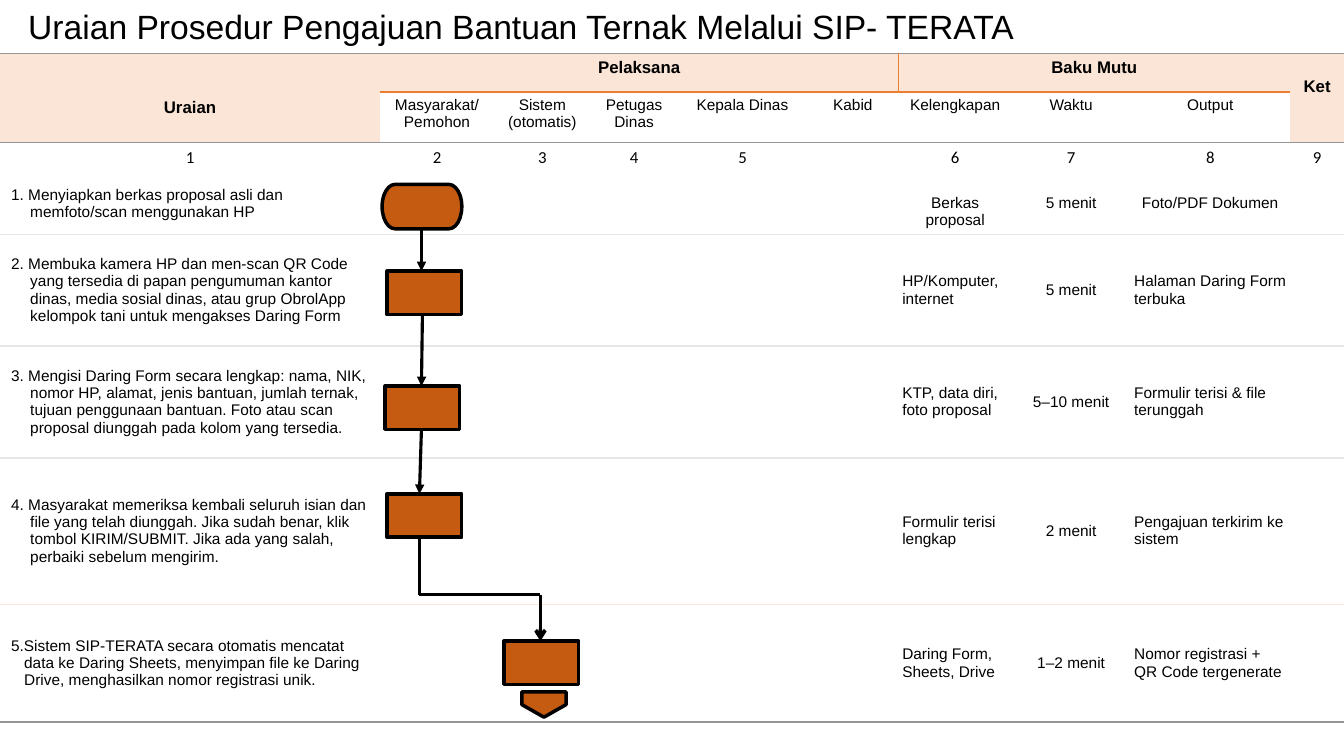
from itertools import accumulate
from lxml import etree
from pptx import Presentation, util as u
from pptx.dml.color import RGBColor
from pptx.enum import shapes, text
from pptx.oxml.ns import qn

TITLE = "Uraian Prosedur Pengajuan Bantuan Ternak Melalui SIP- TERATA"
GROUPS = [(0, 2, 1, "Uraian"), (1, 1, 5, "Pelaksana"), (6, 1, 3, "Baku Mutu"), (9, 2, 1, "Ket")]
HEADS = ["Masyarakat/Pemohon", "Sistem (otomatis)", "Petugas Dinas", "Kepala Dinas",
         "Kabid", "Kelengkapan", "Waktu", "Output"]
NUMBERS = ["1", "2", "3", "4", "5", "", "6", "7", "8", "9"]
STEPS = [
    ("1. Menyiapkan berkas proposal asli dan memfoto/scan menggunakan HP",
     "Berkas proposal", "5 menit", "Foto/PDF Dokumen"),
    ("2. Membuka kamera HP dan men-scan QR Code yang tersedia di papan pengumuman kantor dinas, "
     "media sosial dinas, atau grup ObrolApp kelompok tani untuk mengakses Daring Form",
     "HP/Komputer, internet", "5 menit", "Halaman Daring Form terbuka"),
    ("3. Mengisi Daring Form secara lengkap: nama, NIK, nomor HP, alamat, jenis bantuan, jumlah "
     "ternak, tujuan penggunaan bantuan. Foto atau scan proposal diunggah pada kolom yang tersedia.",
     "KTP, data diri, foto proposal", "5–10 menit", "Formulir terisi & file terunggah"),
    ("4. Masyarakat memeriksa kembali seluruh isian dan file yang telah diunggah. Jika sudah benar, "
     "klik tombol KIRIM/SUBMIT. Jika ada yang salah, perbaiki sebelum mengirim.",
     "Formulir terisi lengkap", "2 menit", "Pengajuan terkirim ke sistem"),
    ("5.Sistem SIP-TERATA secara otomatis mencatat data ke Daring Sheets, menyimpan file ke Daring "
     "Drive, menghasilkan nomor registrasi unik.",
     "Daring Form, Sheets, Drive", "1–2 menit", "Nomor registrasi + QR Code tergenerate"),
]
COLORS = {"ink": "000000", "head": "FBE5D6", "paper": "FFFFFF", "accent": "ED7D31",
          "box": "C55A11", "rule": "959595", "faint": "E7E6E6"}
COLS = [3.77, 1.13, 0.96, 0.86, 1.29, 0.9, 1.13, 1.17, 1.59, 0.53]
ROWS = [0.38, 0.5, 0.3, 0.61, 1.11, 1.11, 1.45, 1.17]
TOP = 0.53
X = list(accumulate(COLS, initial=0))
Y = list(accumulate(ROWS, initial=TOP))
BOX = (0.74, 0.43)
S = shapes.MSO_SHAPE
FLOW = [
    (S.FLOWCHART_TERMINATOR, 1, 3, 0.02, 0.12, (0.79, 0.44), 0),
    (S.RECTANGLE, 1, 4, 0.07, 0.37, BOX, 0),
    (S.RECTANGLE, 1, 5, 0.05, 0.4, BOX, 0),
    (S.RECTANGLE, 1, 6, 0.07, 0.36, BOX, 0),
    (S.RECTANGLE, 2, 7, 0.1, 0.37, BOX, 0),
    (S.PENTAGON, 2, 7, 0.37, 0.78, (0.25, 0.44), 90),
]
ARROW_X = [(4.18, 4.18), (4.19, 4.18), (4.18, 4.16)]
TURN_X, TURN_Y = (4.16, 5.36), 5.9
CENTER, LEFT = text.PP_ALIGN.CENTER, text.PP_ALIGN.LEFT
MIDDLE, UPPER = text.MSO_ANCHOR.MIDDLE, text.MSO_ANCHOR.TOP


def rgb(name):
    return RGBColor.from_string(COLORS[name])


def apply(obj, values):
    for key, value in values.items():
        setattr(obj, key, value)


def style(font, size, name="Arial", bold=False):
    apply(font, {"size": u.Pt(size), "name": name, "bold": bold})
    font.color.rgb = rgb("ink")


def write(cell, words, size=11, name="Arial", bold=False, align=CENTER, anchor=UPPER,
          side=0.11, edge=0.05, lead=0, hang=0):
    apply(cell, {"vertical_anchor": anchor, "margin_left": u.Inches(side),
                 "margin_right": u.Inches(side), "margin_top": u.Inches(edge + lead),
                 "margin_bottom": u.Inches(edge)})
    p = cell.text_frame.paragraphs[0]
    p.alignment = align
    if hang:
        apply_indent = {"marL": str(u.Inches(hang)), "indent": str(-u.Inches(hang))}
        for key, value in apply_indent.items():
            p._p.get_or_add_pPr().set(key, value)
    if words:
        r = p.add_run()
        r.text = words
        style(r.font, size, name, bold)
    else:
        etree.SubElement(p._p, qn("a:endParaRPr")).set("sz", str(size * 100))


def paint(cell, fill, borders):
    tcPr = cell._tc.get_or_add_tcPr()
    for side in "LRTB":
        ln = etree.SubElement(tcPr, qn("a:ln" + side))
        if side in borders:
            color, width = borders[side]
            ln.set("w", str(u.Pt(width)))
            solid = etree.SubElement(ln, qn("a:solidFill"))
            etree.SubElement(solid, qn("a:srgbClr")).set("val", COLORS[color])
        else:
            etree.SubElement(ln, qn("a:noFill"))
    cell.fill.solid()
    cell.fill.fore_color.rgb = rgb(fill)


def borders_of(row, col):
    rules = {0: ("rule", 1), 2: ("rule", 1), 4: ("faint", 1), 5: ("faint", 1),
             6: ("faint", 1), 7: ("head", 1), 8: ("rule", 1)}
    if 1 <= col <= 8:
        rules[1] = ("accent", 1.5)
    found = {side: rules[edge] for side, edge in (("T", row), ("B", row + 1)) if edge in rules}
    if row == 0 and col in (5, 6):
        found["R" if col == 5 else "L"] = ("accent", 1)
    return found


def add_table(s):
    frame = s.shapes.add_table(len(ROWS), len(COLS), 0, u.Inches(TOP),
                               u.Inches(sum(COLS)), u.Inches(sum(ROWS)))
    t = frame.table
    apply(t, {"first_row": False, "horz_banding": False})
    t._tbl.tblPr.find(qn("a:tableStyleId")).text = "{2D5ABB26-0587-4C30-8999-92F81FD0307C}"
    for col, width in zip(t.columns, COLS):
        col.width = u.Inches(width)
    for row, height in zip(t.rows, ROWS):
        row.height = u.Inches(height)
    for row in range(len(ROWS)):
        for col in range(len(COLS)):
            head = row == 0 or (row == 1 and col in (0, 9))
            paint(t.cell(row, col), "head" if head else "paper", borders_of(row, col))
    for col, down, across, words in GROUPS:
        t.cell(0, col).merge(t.cell(down - 1, col + across - 1))
        write(t.cell(0, col), words, 12, bold=True, lead=0.19 if down > 1 else 0,
              anchor=MIDDLE if col == 0 else UPPER)
    for col, words in enumerate(HEADS, 1):
        write(t.cell(1, col), words)
    for col, words in enumerate(NUMBERS):
        write(t.cell(2, col), words, 12, "Calibri", anchor=MIDDLE if col == 0 else UPPER)
    for row, (task, *quality) in enumerate(STEPS, 3):
        write(t.cell(row, 0), task, align=LEFT, anchor=MIDDLE, hang=0.13 if row == 7 else 0.19)
        for col in (1, 2, 3, 4, 5, 9):
            write(t.cell(row, col), "")
        for col, words in enumerate(quality, 6):
            if row == 3:
                write(t.cell(row, col), words, lead=0.17)
            else:
                write(t.cell(row, col), words, align=CENTER if col == 7 else LEFT,
                      anchor=MIDDLE, side=0.04, edge=0.03)


def add_line(s, x1, y1, x2, y2, width=2.5, head=None):
    c = s.shapes.add_connector(shapes.MSO_CONNECTOR.STRAIGHT, *map(u.Inches, (x1, y1, x2, y2)))
    c.line.color.rgb = rgb("ink")
    c.line.width = u.Pt(width)
    if head:
        etree.SubElement(c.line._get_or_add_ln(), qn("a:tailEnd")).set("type", head)
    etree.SubElement(c._element.spPr, qn("a:effectLst"))


def add_flow(s):
    spans = []
    for kind, col, row, dx, dy, (w, h), turn in FLOW:
        x, y = X[col] + dx, Y[row] + dy
        sp = s.shapes.add_shape(kind, *map(u.Inches, (x, y, w, h)))
        sp.rotation = turn
        sp.shadow.inherit = False
        sp.fill.solid()
        sp.fill.fore_color.rgb = rgb("box")
        sp.line.color.rgb = rgb("ink")
        sp.line.width = u.Pt(2.5)
        spans.append((y, y + h))
    for (x1, x2), above, below in zip(ARROW_X, spans, spans[1:]):
        add_line(s, x1, above[1], x2, below[0], 2.25, "triangle")
    start, end = TURN_X
    add_line(s, start, spans[3][1], start, TURN_Y)
    add_line(s, start, TURN_Y, end, TURN_Y)
    add_line(s, end, TURN_Y, end, spans[4][0], head="arrow")


def main():
    prs = Presentation()
    apply(prs, {"slide_width": u.Inches(13.33), "slide_height": u.Inches(7.5)})
    s = prs.slides.add_slide(prs.slide_layouts[5])
    title = s.shapes.title
    apply(title, {"left": 0, "top": u.Inches(0.06), "width": prs.slide_width,
                  "height": u.Inches(0.45)})
    tf = title.text_frame
    apply(tf, {"auto_size": text.MSO_AUTO_SIZE.NONE, "vertical_anchor": MIDDLE,
               "margin_left": u.Inches(0.28), "word_wrap": True})
    p = tf.paragraphs[0]
    apply(p, {"alignment": LEFT, "line_spacing": 0.9})
    r = p.add_run()
    r.text = TITLE
    style(r.font, 24)
    add_table(s)
    add_flow(s)
    prs.save("out.pptx")


if __name__ == "__main__":
    main()
